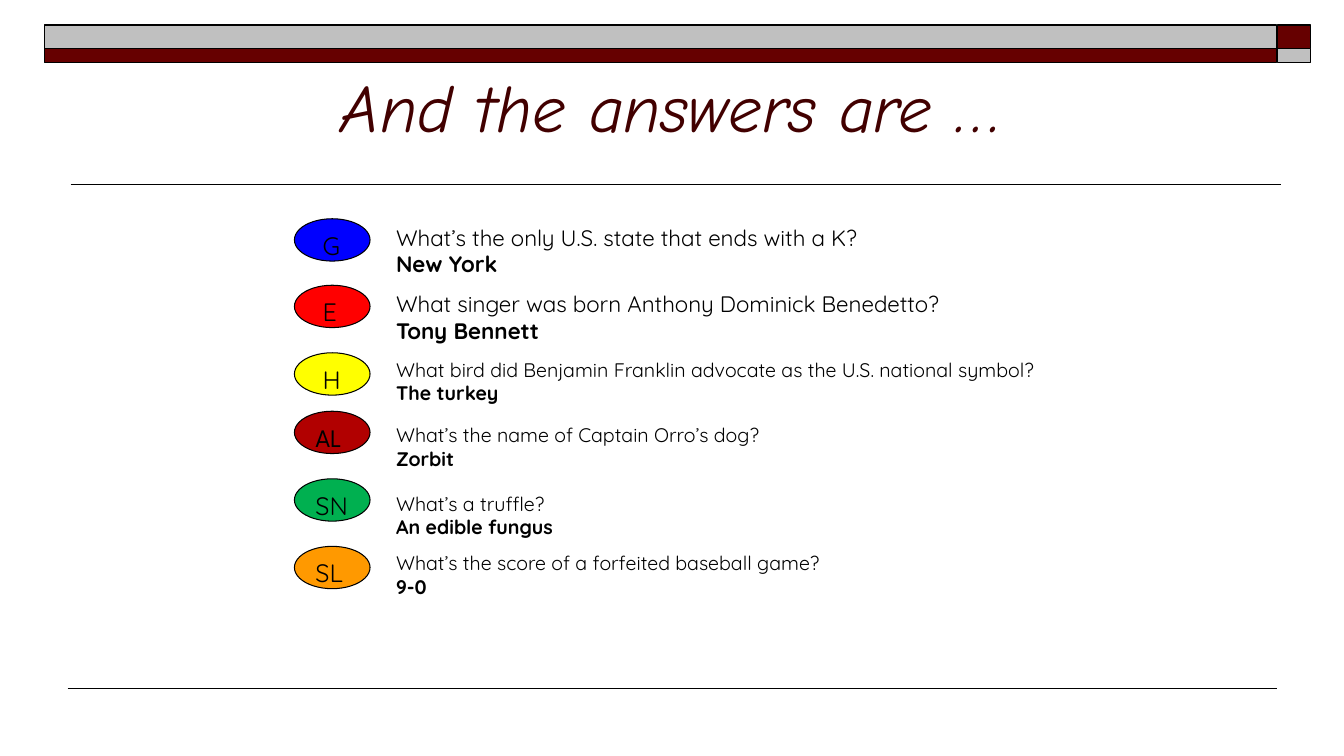
from lxml import etree
from pptx import Presentation
from pptx.dml.color import RGBColor
from pptx.enum.shapes import MSO_CONNECTOR, MSO_SHAPE
from pptx.enum.text import MSO_ANCHOR, PP_ALIGN
from pptx.oxml.ns import qn
from pptx.util import Inches, Pt

COLORS = {
    "black": "000000", "maroon": "660000", "silver": "C0C0C0", "title": "420000",
    "blue": "0000FF", "red": "FF0000", "yellow": "FFFF00",
    "crimson": "B10000", "green": "00B050", "orange": "FF9900",
}


def add_filled(kind, x, y, w, h, color, line_width):
    s = slide.shapes.add_shape(kind, Inches(x), Inches(y), Inches(w), Inches(h))
    s.shadow.inherit = False
    s.fill.solid()
    s.fill.fore_color.rgb = RGBColor.from_string(COLORS[color])
    s.line.color.rgb = RGBColor.from_string(COLORS["black"])
    s.line.width = Pt(line_width)
    return s


def add_run(p, text, size, font="Quicksand", color="black", bold=False, italic=False):
    r = p.add_run()
    r.text = text
    r.font.name = font
    r.font.size = Pt(size)
    r.font.bold = bold
    r.font.italic = italic
    r.font.color.rgb = RGBColor.from_string(COLORS[color])


prs = Presentation()
prs.slide_width = Inches(13.33)
prs.slide_height = Inches(7.5)
slide = prs.slides.add_slide(prs.slide_layouts[6])

for x1, x2, y, width in [(0.7, 12.71, 1.83, 1), (0.67, 12.67, 6.83, 0.75)]:
    rule = slide.shapes.add_connector(
        MSO_CONNECTOR.STRAIGHT, Inches(x1), Inches(y), Inches(x2), Inches(y))
    rule.line.color.rgb = RGBColor.from_string(COLORS["black"])
    rule.line.width = Pt(width)
    etree.SubElement(rule._element.spPr, qn("a:effectLst"))

for y, h, bar, corner in [(0.25, 0.23, "silver", "maroon"), (0.48, 0.14, "maroon", "silver")]:
    add_filled(MSO_SHAPE.RECTANGLE, 12.67, y, 0.33, h, corner, 1)
    add_filled(MSO_SHAPE.RECTANGLE, 0.44, y, 12.22, h, bar, 1)

title = slide.shapes.add_textbox(Inches(2.17), Inches(0.25), Inches(9), Inches(1.25))
tf = title.text_frame
tf.word_wrap = True
tf.vertical_anchor = MSO_ANCHOR.BOTTOM
p = tf.paragraphs[0]
p.alignment = PP_ALIGN.CENTER
add_run(p, "And the answers are …", 48, "Comic Neue", "title", italic=True)

answers = [
    ("G", "blue", 2.17, 2.17, 16, "What’s the only U.S. state that ends with a K?", "New York"),
    ("E", "red", 2.83, 2.83, 16, "What singer was born Anthony Dominick Benedetto?", "Tony Bennett"),
    ("H", "yellow", 3.5, 3.5, 14,
     "What bird did Benjamin Franklin advocate as the U.S. national symbol?", "The turkey"),
    ("AL", "crimson", 4.08, 4.15, 14, "What’s the name of Captain Orro’s dog?", "Zorbit"),
    ("SN", "green", 4.75, 4.83, 14, "What’s a truffle?", "An edible fungus"),
    ("SL", "orange", 5.42, 5.42, 14, "What’s the score of a forfeited baseball game?", "9-0"),
]

for code, color, oval_y, text_y, size, question, answer in answers:
    oval = add_filled(MSO_SHAPE.OVAL, 2.92, oval_y, 0.75, 0.42, color, 0.75)
    tf = oval.text_frame
    tf.vertical_anchor = MSO_ANCHOR.TOP
    tf.margin_left = Inches(0.17 if len(code) == 1 else 0.1)
    p = tf.paragraphs[0]
    p.alignment = PP_ALIGN.LEFT
    add_run(p, code, 18, "League Spartan" if code == "AL" else "Quicksand")

    box = slide.shapes.add_textbox(
        Inches(3.83), Inches(text_y), Inches(7.17), Inches(0.64 if size == 16 else 0.57))
    tf = box.text_frame
    tf.word_wrap = True
    add_run(tf.paragraphs[0], question, size)
    add_run(tf.add_paragraph(), answer, size, bold=True)

prs.save("out.pptx")
